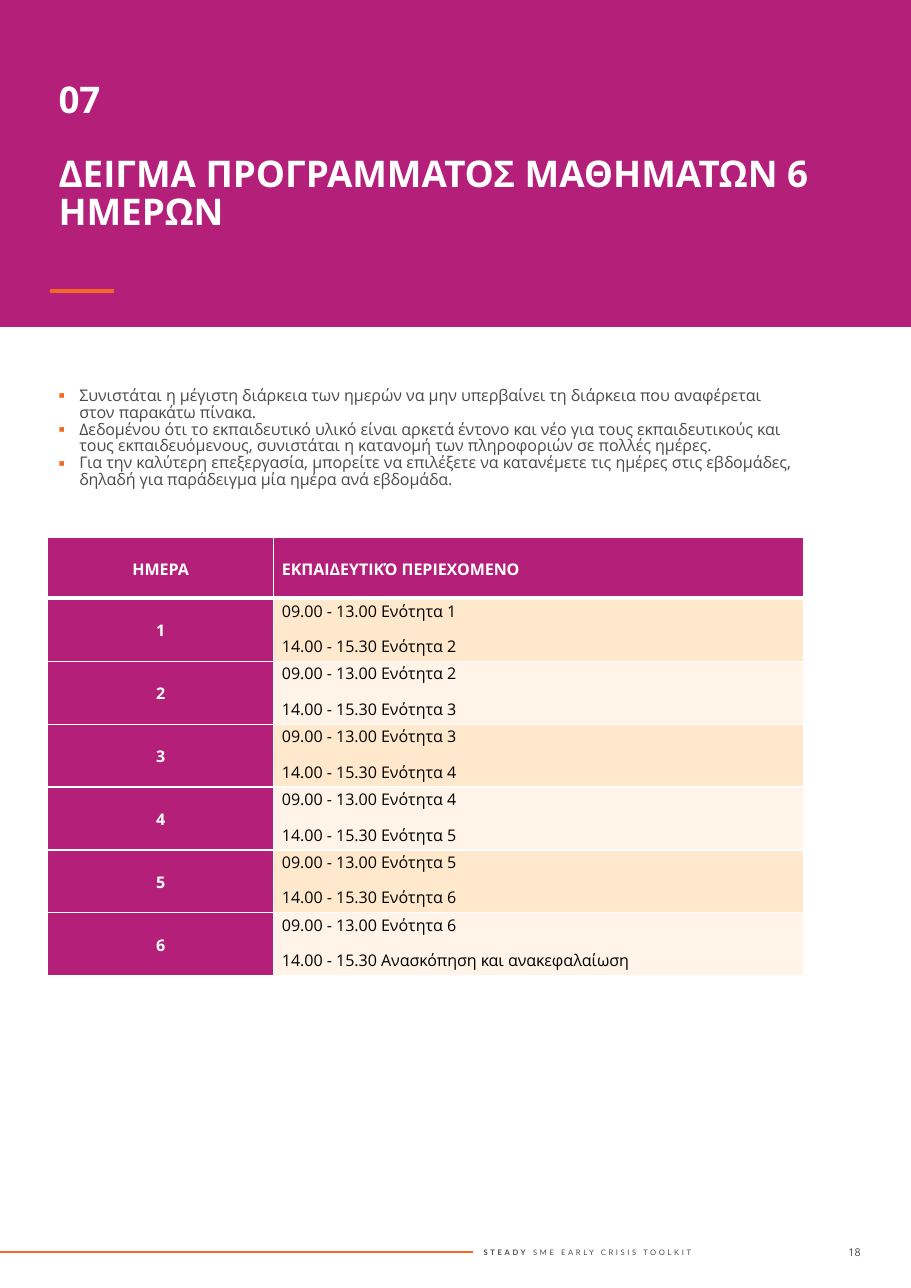
from dataclasses import dataclass
from typing import Any

from lxml import etree
from pptx import Presentation
from pptx import util as u
from pptx.dml.color import RGBColor
from pptx.enum import shapes, text
from pptx.oxml import ns

COLORS = {
    "magenta": "B41F7A",
    "orange": "F16924",
    "grey": "4B4B4B",
    "white": "FFFFFF",
    "black": "000000",
    "peach": "FFE8CC",
    "cream": "FFF4E7",
}
SANS = "Open Sans"
LEFT = text.PP_ALIGN.LEFT
CENTER = text.PP_ALIGN.CENTER
RIGHT = text.PP_ALIGN.RIGHT
TOP = text.MSO_ANCHOR.TOP
MIDDLE = text.MSO_ANCHOR.MIDDLE


@dataclass
class Span:
    words: str
    size: float
    color: str
    bold: bool = False
    font: str = SANS
    tracking: int = 0


@dataclass
class Para:
    spans: list[Span]
    layout: dict[str, Any]
    bullet: str = ""


@dataclass
class Rule:
    left: float
    right: float
    y: float
    width: float


def rgb(name: str) -> RGBColor:
    return RGBColor.from_string(COLORS[name])


def assign(target: Any, values: dict[str, Any]) -> None:
    for name, value in values.items():
        setattr(target, name, value)


def add_bullet(para: Any, mark: str) -> None:
    properties = para._p.get_or_add_pPr()
    properties.set("marL", str(u.Cm(0.48)))
    properties.set("indent", str(-u.Cm(0.48)))
    color = etree.SubElement(properties, ns.qn("a:buClr"))
    etree.SubElement(color, ns.qn("a:srgbClr"), val=COLORS["orange"])
    etree.SubElement(properties, ns.qn("a:buFont"), typeface=SANS)
    etree.SubElement(properties, ns.qn("a:buChar"), char=mark)


def write(frame: Any, paras: list[Para]) -> None:
    for index, item in enumerate(paras):
        para = frame.add_paragraph() if index else frame.paragraphs[0]
        assign(para, item.layout)
        if item.bullet:
            add_bullet(para, item.bullet)
        for span in item.spans:
            run = para.add_run()
            run.text = span.words
            assign(run.font, {"name": span.font, "size": u.Pt(span.size), "bold": span.bold})
            run.font.color.rgb = rgb(span.color)
            if span.tracking:
                run._r.get_or_add_rPr().set("spc", str(span.tracking))


def add_text(page: Any, area: tuple[float, ...], anchor: Any, paras: list[Para]) -> Any:
    box = page.shapes.add_textbox(*map(u.Cm, area))
    assign(box.text_frame, {"word_wrap": True, "vertical_anchor": anchor})
    write(box.text_frame, paras)
    return box


def add_rule(page: Any, rule: Rule) -> Any:
    line = page.shapes.add_connector(
        shapes.MSO_CONNECTOR.STRAIGHT,
        u.Cm(rule.left), u.Cm(rule.y), u.Cm(rule.right), u.Cm(rule.y),
    )
    line.line.color.rgb = rgb("orange")
    line.line.width = u.Pt(rule.width)
    etree.SubElement(line._element.spPr, ns.qn("a:effectLst"))
    return line


def add_borders(cell: Any, widths: dict[str, float]) -> None:
    properties = cell._tc.get_or_add_tcPr()
    for index, (side, width) in enumerate(widths.items()):
        border = etree.Element(ns.qn(f"a:ln{side}"), w=str(u.Pt(width)))
        fill = etree.SubElement(border, ns.qn("a:solidFill"))
        etree.SubElement(fill, ns.qn("a:srgbClr"), val=COLORS["white"])
        properties.insert(index, border)


def fill_cell(cell: Any, lines: list[str], fill: str, row: int, column: int) -> None:
    heading = row == 0 or column == 0
    margins = {"margin_left": u.Cm(0.19), "margin_right": u.Cm(0.19),
               "margin_top": 0, "margin_bottom": 0}
    assign(cell, {**margins, "vertical_anchor": MIDDLE if heading else TOP})
    cell.fill.solid()
    cell.fill.fore_color.rgb = rgb(fill)
    layout = {"alignment": LEFT if column else CENTER,
              "line_spacing": 1.07, "space_after": u.Pt(8)}
    color = "white" if heading else "black"
    write(cell.text_frame, [Para([Span(line, 10.5, color, heading)], layout) for line in lines])
    add_borders(cell, {"L": 1, "R": 1, "T": 3 if row == 1 else 1, "B": 3 if row == 0 else 1})


def add_schedule(page: Any) -> None:
    days = 6
    rows = [(["ΗΜΕΡΑ"], ["ΕΚΠΑΙΔΕΥΤΙΚΌ ΠΕΡΙΕΧΟΜΕΝΟ"])]
    for day in range(1, days + 1):
        afternoon = f"Ενότητα {day + 1}" if day < days else "Ανασκόπηση και ανακεφαλαίωση"
        rows.append(([str(day)], [f"09.00 - 13.00 Ενότητα {day}", f"14.00 - 15.30 {afternoon}"]))
    table = page.shapes.add_table(
        len(rows), 2, u.Cm(1.1), u.Cm(12.4), u.Cm(17.43), u.Cm(10.1)
    ).table
    table.horz_banding = False
    for column, width in zip(table.columns, (5.21, 12.22)):
        column.width = u.Cm(width)
    for row, contents in enumerate(rows):
        table.rows[row].height = u.Cm(1.45 if row else 1.4)
        band = "peach" if row % 2 else "cream"
        for column, lines in enumerate(contents):
            fill = band if row and column else "magenta"
            fill_cell(table.cell(row, column), lines, fill, row, column)


def main() -> None:
    deck = Presentation()
    assign(deck, {"slide_width": u.Cm(21), "slide_height": u.Cm(29.7)})
    page = deck.slides.add_slide(deck.slide_layouts[6])

    banner = page.shapes.add_shape(shapes.MSO_SHAPE.RECTANGLE, 0, 0, u.Cm(21), u.Cm(7.54))
    banner.shadow.inherit = False
    banner.fill.solid()
    banner.fill.fore_color.rgb = rgb("magenta")
    banner.line.fill.background()
    add_rule(page, Rule(1.15, 2.62, 6.71, 2.25))

    footer = add_text(page, (10.9, 28.35, 8.23, 1.04), MIDDLE, [Para([
        Span("STEADY", 5, "grey", True, "Lato", 170),
        Span(" SME EARLY CRISIS TOOLKIT", 5, "grey", False, "Lato", 170),
    ], {})])
    add_rule(page, Rule(0, 10.9, 28.87, 1.5)).end_connect(footer, 1)

    title_layout = {"space_before": u.Pt(22.7), "line_spacing": 0.88}
    titles = ["07", "ΔΕΙΓΜΑ ΠΡΟΓΡΑΜΜΑΤΟΣ ΜΑΘΗΜΑΤΩΝ 6 ΗΜΕΡΩΝ"]
    add_text(page, (1.1, 1.78, 19, 2.06), TOP,
             [Para([Span(title, 24, "white", True)], title_layout) for title in titles])
    add_text(page, (17.35, 28.22, 2.74, 1.3), MIDDLE,
             [Para([Span("18", 7, "grey")], {"alignment": RIGHT})])

    add_schedule(page)

    notes = [
        "Συνιστάται η μέγιστη διάρκεια των ημερών να μην υπερβαίνει τη διάρκεια "
        "που αναφέρεται στον παρακάτω πίνακα.",
        "Δεδομένου ότι το εκπαιδευτικό υλικό είναι αρκετά έντονο και νέο για τους "
        "εκπαιδευτικούς και τους εκπαιδευόμενους, συνιστάται η κατανομή των "
        "πληροφοριών σε πολλές ημέρες.",
        "Για την καλύτερη επεξεργασία, μπορείτε να επιλέξετε να κατανέμετε τις ημέρες "
        "στις εβδομάδες, δηλαδή για παράδειγμα μία ημέρα ανά εβδομάδα.",
    ]
    add_text(page, (1.1, 8.86, 17.43, 2.5), MIDDLE,
             [Para([Span(note, 10.5, "grey")], {"line_spacing": 0.88}, "▪") for note in notes])

    deck.save("out.pptx")


if __name__ == "__main__":
    main()
